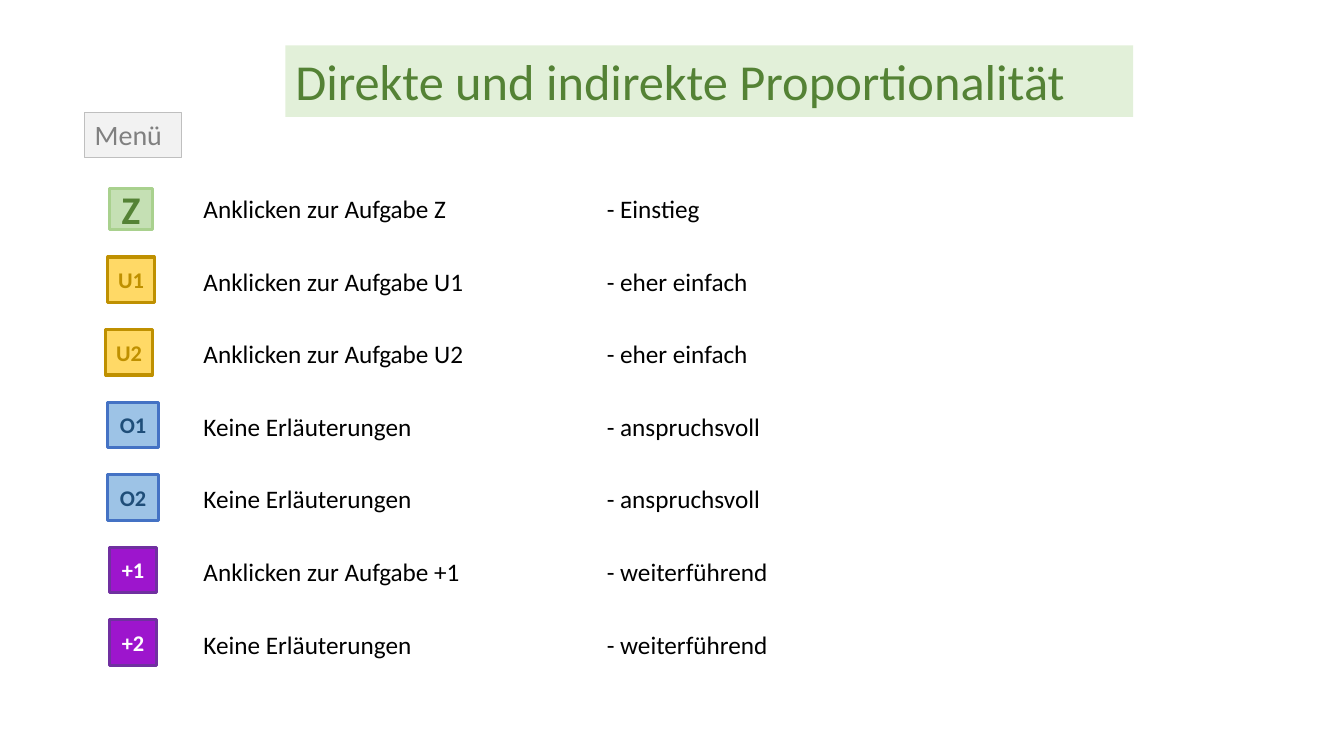
from lxml.etree import SubElement
from pptx import Presentation
from pptx.dml.color import RGBColor
from pptx.enum.shapes import MSO_SHAPE
from pptx.enum.text import MSO_ANCHOR, PP_ALIGN
from pptx.oxml.ns import qn
from pptx.util import Inches, Pt

TITLE = "Direkte und indirekte Proportionalität"
MENU = "Menü"
STYLES = {
    "Z": ("C5E0B4", "A9D18E", "548235"),
    "U": ("FFD966", "BF9000", "BF9000"),
    "O": ("9DC3E6", "4472C4", "1F4E79"),
    "+": ("9D15CD", "7030A0", "FFFFFF"),
}
TASKS = [
    ("Z", 1.09, 0.42, 0.41, 28, "Anklicken zur Aufgabe Z", "Einstieg"),
    ("U1", 1.07, 0.46, 0.45, 16, "Anklicken zur Aufgabe U1", "eher einfach"),
    ("U2", 1.05, 0.46, 0.45, 16, "Anklicken zur Aufgabe U2", "eher einfach"),
    ("O1", 1.07, 0.5, 0.45, 16, "Keine Erläuterungen", "anspruchsvoll"),
    ("O2", 1.07, 0.5, 0.45, 16, "Keine Erläuterungen", "anspruchsvoll"),
    ("+1", 1.09, 0.46, 0.45, 16, "Anklicken zur Aufgabe +1", "weiterführend"),
    ("+2", 1.09, 0.46, 0.45, 16, "Keine Erläuterungen", "weiterführend"),
]
FIRST_LABEL_TOP = 1.87
FIRST_BADGE_BOTTOM = 2.28
ROW_PITCH = 0.72
LEVEL_TAB = 4


def color(value):
    return RGBColor.from_string(value)


def write(shape, text, size, ink, bold=False, align=PP_ALIGN.LEFT):
    shape.text_frame.word_wrap = True
    paragraph = shape.text_frame.paragraphs[0]
    paragraph.alignment = align
    run = paragraph.add_run()
    run.text = text
    run.font.name = "Calibri"
    run.font.size = Pt(size)
    run.font.bold = bold
    run.font.color.rgb = color(ink)
    return paragraph


def add_box(slide, bounds, fill, border=None, border_width=0):
    box = slide.shapes.add_shape(MSO_SHAPE.RECTANGLE, *map(Inches, bounds))
    box.shadow.inherit = False
    box.fill.solid()
    box.fill.fore_color.rgb = color(fill)
    if border:
        box.line.color.rgb = color(border)
        box.line.width = Pt(border_width)
    else:
        box.line.fill.background()
    box.text_frame.vertical_anchor = MSO_ANCHOR.TOP
    return box


def add_badge(slide, bounds, code, size):
    fill, border, ink = STYLES[code[0]]
    badge = add_box(slide, bounds, fill, border, 2.25)
    frame = badge.text_frame
    frame.margin_left = frame.margin_right = 0
    frame.vertical_anchor = MSO_ANCHOR.MIDDLE
    write(badge, code, size, ink, True, PP_ALIGN.CENTER)


def add_label(slide, top, hint, level):
    label = slide.shapes.add_textbox(Inches(1.92), Inches(top), Inches(6.7), Inches(0.4))
    paragraph = write(label, f"{hint}\t- {level}", 18, "000000")
    tabs = SubElement(paragraph._p.get_or_add_pPr(), qn("a:tabLst"))
    SubElement(tabs, qn("a:tab"), pos=str(Inches(LEVEL_TAB)), algn="l")


def main():
    presentation = Presentation()
    presentation.slide_width = Inches(13.33)
    presentation.slide_height = Inches(7.5)
    slide = presentation.slides.add_slide(presentation.slide_layouts[6])

    title = add_box(slide, (2.83, 0.45, 8.41, 0.71), "E2F0D9")
    write(title, TITLE, 36, "548235")

    for row, (code, left, width, height, size, hint, level) in enumerate(TASKS):
        offset = row * ROW_PITCH
        badge_top = FIRST_BADGE_BOTTOM + offset - height
        add_badge(slide, (left, badge_top, width, height), code, size)
        add_label(slide, FIRST_LABEL_TOP + offset, hint, level)

    menu = add_box(slide, (0.84, 1.12, 0.96, 0.44), "F2F2F2", "BFBFBF", 0.75)
    write(menu, MENU, 20, "808080")

    presentation.save("out.pptx")


if __name__ == "__main__":
    main()
